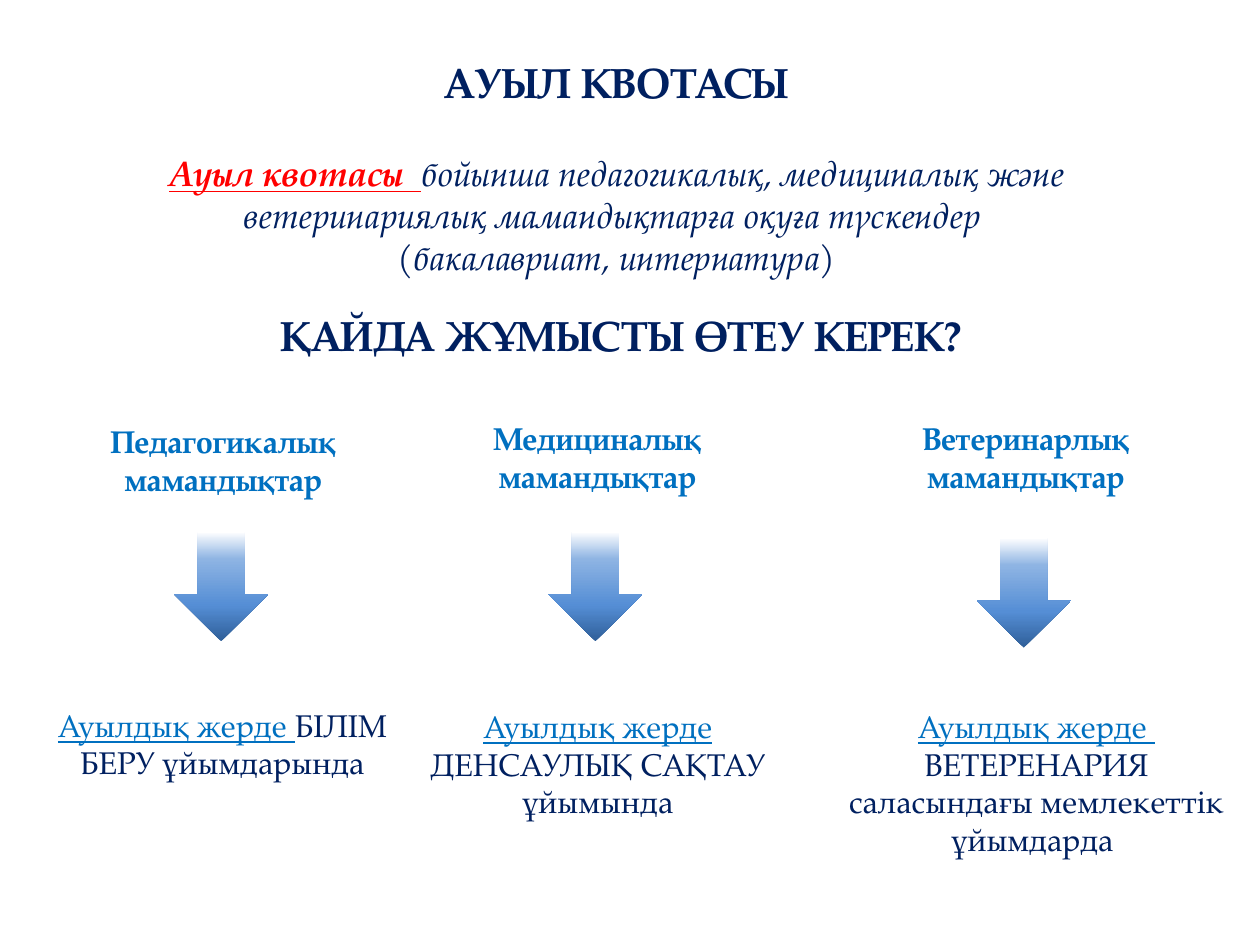
from lxml import etree
from pptx import Presentation
from pptx.dml.color import RGBColor
from pptx.enum.shapes import MSO_SHAPE as Shape
from pptx.enum.text import MSO_ANCHOR as Anchor, PP_ALIGN as Align
from pptx.oxml.ns import qn
from pptx.util import Inches, Pt

FONT = "TeX Gyre Pagella"
NAVY = RGBColor(0x00, 0x20, 0x60)
BLUE = RGBColor(0x00, 0x70, 0xC0)
RED = RGBColor(0xFF, 0x00, 0x00)
# Arrow shading from the tip upwards: position in percent, colour
ARROW_STOPS = [
    (0, RGBColor(0x2F, 0x5F, 0x99)),
    (33, RGBColor(0x55, 0x8E, 0xD5)),
    (75, RGBColor(0x8E, 0xB4, 0xE3)),
    (100, RGBColor(0xFF, 0xFF, 0xFF)),
]
BREAK = ("\n", {})


def add_text(slide, box, paragraphs, size=18, color=NAVY, bold=False,
             italic=False, align=Align.CENTER, anchor=Anchor.TOP, wrap=True):
    """Each paragraph is a list of (text, format overrides) runs."""
    frame = slide.shapes.add_textbox(*map(Inches, box)).text_frame
    frame.word_wrap = wrap
    frame.vertical_anchor = anchor
    for index, runs in enumerate(paragraphs):
        paragraph = frame.add_paragraph() if index else frame.paragraphs[0]
        paragraph.alignment = align
        for text, overrides in runs:
            if text == "\n":
                paragraph.add_line_break()
                continue
            run = paragraph.add_run()
            run.text = text
            font = run.font
            font.name = FONT
            font.size = Pt(size)
            font.bold = overrides.get("bold", bold)
            font.italic = italic
            font.underline = overrides.get("underline", False)
            font.color.rgb = overrides.get("color", color)


def add_down_arrow(slide, left, top):
    arrow = slide.shapes.add_shape(
        Shape.DOWN_ARROW, Inches(left), Inches(top), Inches(0.75), Inches(0.87))
    arrow.shadow.inherit = False
    arrow.line.fill.background()
    arrow.fill.gradient()
    arrow.fill.gradient_angle = 90
    stops = arrow.element.spPr.find(".//" + qn("a:gsLst"))
    for stop in list(stops):
        stops.remove(stop)
    for percent, color in ARROW_STOPS:
        stop = etree.SubElement(stops, qn("a:gs"), pos=str(percent * 1000))
        etree.SubElement(stop, qn("a:srgbClr"), val=str(color))


def main():
    prs = Presentation()
    prs.slide_width, prs.slide_height = Inches(10), Inches(7.5)
    slide = prs.slides.add_slide(prs.slide_layouts[6])

    # Title, definition and question
    add_text(slide, (2.96, 0.4, 3.87, 0.5), [[("АУЫЛ КВОТАСЫ", {})]],
             size=24, bold=True, anchor=Anchor.MIDDLE)
    quota = ("Ауыл квотасы  ", {"color": RED, "bold": True, "underline": True})
    add_text(slide, (0.68, 1.15, 8.43, 1.11), [
        [quota, ("бойынша педагогикалық, медициналық және "
                 "ветеринариялық мамандықтарға оқуға түскендер ", {})],
        [("(бакалавриат, интернатура)", {})],
    ], size=20, italic=True)
    add_text(slide, (2.13, 2.41, 6.25, 0.5),
             [[("ҚАЙДА ЖҰМЫСТЫ ӨТЕУ КЕРЕК?", {})]],
             size=24, bold=True, align=Align.LEFT, wrap=False)

    # Columns: specialty, its left and top, arrow top, workplace box and text
    village = {"color": BLUE, "underline": True}
    village_spaced = ("Ауылдық жерде ", village)
    columns = [
        ("Педагогикалық мамандықтар", 0.51, 3.3, 4.22, (0.35, 5.55, 2.83, 1.01),
         [[village_spaced, ("БІЛІМ БЕРУ ұйымдарында", {})]]),
        ("Медициналық мамандықтар", 3.48, 3.28, 4.22, (3.29, 5.56, 2.91, 1.01),
         [[("Ауылдық жерде", village), BREAK,
           ("ДЕНСАУЛЫҚ САҚТАУ ұйымында", {})]]),
        ("Ветеринарлық мамандықтар", 6.88, 3.28, 4.27, (6.53, 5.56, 3.39, 1.31),
         [[village_spaced],
          [("ВЕТЕРЕНАРИЯ саласындағы мемлекеттік ұйымдарда ", {})]]),
    ]
    for specialty, left, top, arrow_top, work_box, workplace in columns:
        add_text(slide, (left, top, 2.52, 0.71), [[(specialty, {})]],
                 color=BLUE, bold=True)
        add_down_arrow(slide, left + 0.87, arrow_top)
        add_text(slide, work_box, workplace)

    prs.save("out.pptx")


if __name__ == "__main__":
    main()
